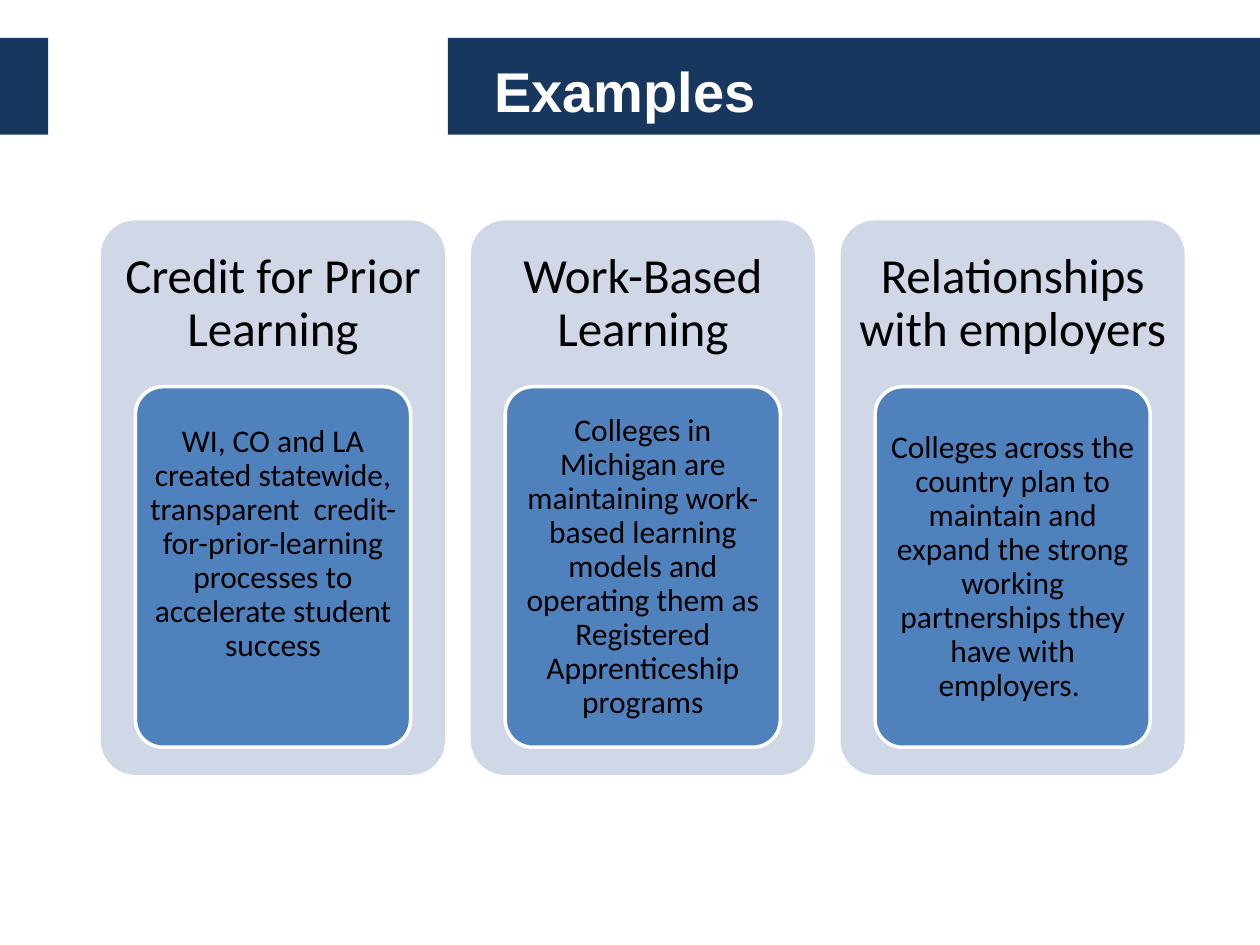
import pptx
import pptx.util
import pptx.dml.color
import pptx.enum.shapes
import pptx.enum.text

Pt = pptx.util.Pt
RGB = pptx.dml.color.RGBColor
KIND = pptx.enum.shapes.MSO_SHAPE
ALIGN = pptx.enum.text.PP_ALIGN
MIDDLE = pptx.enum.text.MSO_ANCHOR.MIDDLE

NAVY = RGB(0x17, 0x37, 0x5E)
PALE = RGB(0xD0, 0xD8, 0xE8)
BLUE = RGB(0x4F, 0x81, 0xBD)
WHITE = RGB(0xFF, 0xFF, 0xFF)
BLACK = RGB(0x00, 0x00, 0x00)

TITLE = {"size": Pt(32), "name": "Arial", "bold": True}
HEAD = {"size": Pt(28), "name": "Calibri"}
BODY = {"size": Pt(18), "name": "Calibri"}

# Heading, body text, extra bottom margin that lifts the body
CARDS = [
    ("Credit for Prior Learning",
     "WI, CO and LA created statewide, transparent  credit-for-prior-learning "
     "processes to accelerate student success", 26),
    ("Work-Based Learning",
     "Colleges in Michigan are maintaining work-based learning models and "
     "operating them as Registered Apprenticeship programs", 0),
    ("Relationships with employers ",
     "Colleges across the country plan to maintain and expand the strong "
     "working partnerships they have with employers. ", 0),
]
LEFT, TOP, STEP = 57.7, 126, 211.35


def add_box(slide, kind, area, fill, line=None):
    shape = slide.shapes.add_shape(kind, *map(Pt, area))
    shape.shadow.inherit = False
    shape.fill.solid()
    shape.fill.fore_color.rgb = fill
    if line is None:
        shape.line.fill.background()
    else:
        shape.line.color.rgb = line
        shape.line.width = Pt(2)
    if kind == KIND.ROUNDED_RECTANGLE:
        shape.adjustments[0] = 0.1


def add_text(slide, area, text, style, color, pads, align, space=1.0):
    frame = slide.shapes.add_textbox(*map(Pt, area)).text_frame
    left, top, right, bottom = map(Pt, pads)
    form = {"word_wrap": True, "vertical_anchor": MIDDLE,
            "margin_left": left, "margin_top": top,
            "margin_right": right, "margin_bottom": bottom}
    for key, value in form.items():
        setattr(frame, key, value)
    para = frame.paragraphs[0]
    para.text = text
    para.alignment = align
    para.line_spacing = space
    for key, value in style.items():
        setattr(para.font, key, value)
    para.font.color.rgb = color


def add_card(slide, left, head, body, lift):
    box = KIND.ROUNDED_RECTANGLE
    add_box(slide, box, (left, TOP, 196.6, 316.8), PALE)
    add_text(slide, (left, TOP, 196.6, 95), head, HEAD, BLACK,
             (8.4, 8.4, 8.4, 8.4), ALIGN.CENTER, 0.9)
    add_box(slide, box, (left + 19.7, TOP + 95, 157.2, 206), BLUE, WHITE)
    add_text(slide, (left + 24.3, TOP + 99.8, 148, 196.6), body, BODY, BLACK,
             (3.6, 2.7, 3.6, 2.7 + lift), ALIGN.CENTER, 0.9)


def main():
    deck = pptx.Presentation()
    deck.slide_width, deck.slide_height = Pt(720), Pt(540)
    slide = deck.slides.add_slide(deck.slide_layouts[6])

    # Title band in two parts
    for left, width in ((256, 464), (0, 27.5)):
        add_box(slide, KIND.RECTANGLE, (left, 21.6, width, 55.4), NAVY)
    add_text(slide, (275.4, 19.8, 422.6, 63), "Examples", TITLE, WHITE,
             (7.2, 3.6, 7.2, 3.6), ALIGN.LEFT)

    # Three cards at equal steps
    for i, (head, body, lift) in enumerate(CARDS):
        add_card(slide, LEFT + i * STEP, head, body, lift)

    deck.save("out.pptx")


if __name__ == "__main__":
    main()
